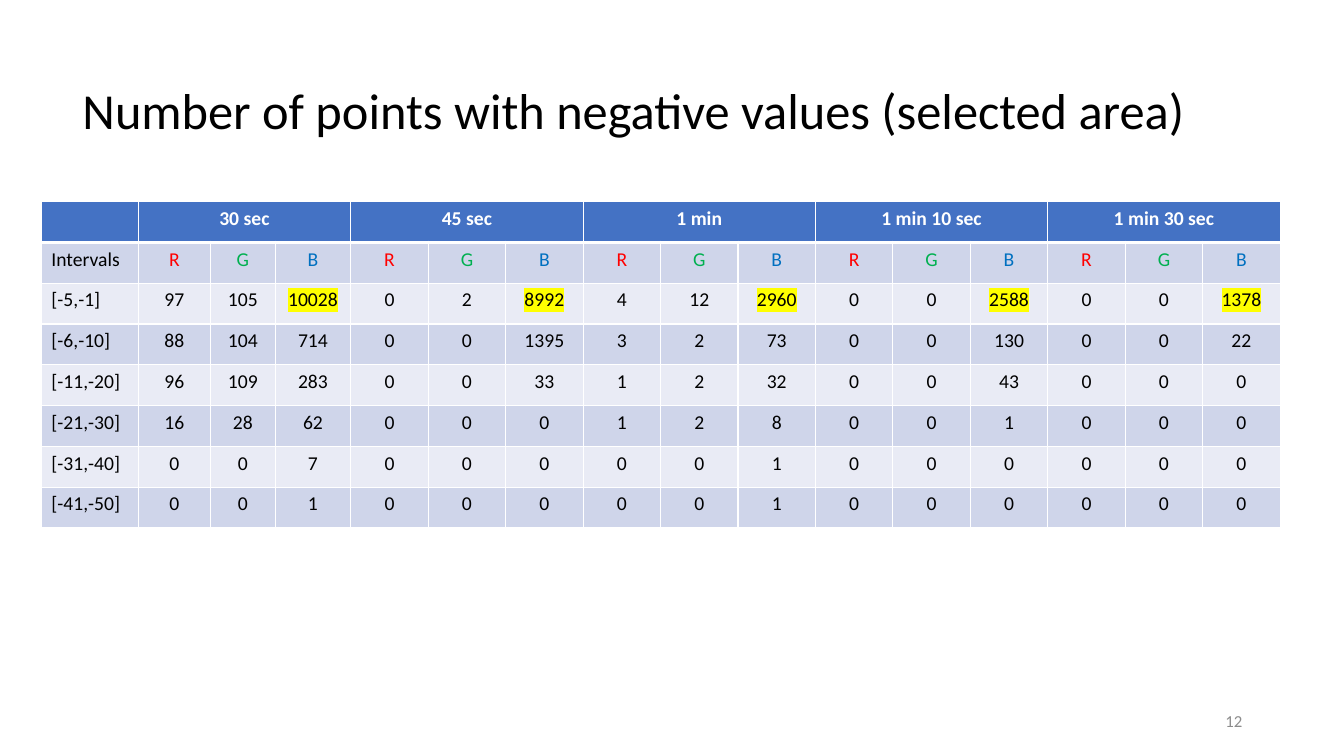
from lxml import etree
from pptx import Presentation
from pptx import util as u
from pptx.dml.color import RGBColor
from pptx.enum import text
from pptx.oxml import ns

FONT = "Calibri"
WHITE, BLACK, GREY, YELLOW = "FFFFFF", "000000", "8C8C8C", "FFFF00"
HEADER_FILL, BANDS = "4472C4", ("CFD5EA", "E9EBF5")
CHANNELS = {"R": "FF0000", "G": "00B050", "B": "0070C0"}
TIMES = ["30 sec", "45 sec", "1 min", "1 min 10 sec", "1 min 30 sec"]
COUNTS = {
    "[-5,-1]": [97, 105, 10028, 0, 2, 8992, 4, 12, 2960, 0, 0, 2588, 0, 0, 1378],
    "[-6,-10]": [88, 104, 714, 0, 0, 1395, 3, 2, 73, 0, 0, 130, 0, 0, 22],
    "[-11,-20]": [96, 109, 283, 0, 0, 33, 1, 2, 32, 0, 0, 43, 0, 0, 0],
    "[-21,-30]": [16, 28, 62, 0, 0, 0, 1, 2, 8, 0, 0, 1, 0, 0, 0],
    "[-31,-40]": [0, 0, 7, 0, 0, 0, 0, 0, 1, 0, 0, 0, 0, 0, 0],
    "[-41,-50]": [0, 0, 1, 0, 0, 0, 0, 0, 1, 0, 0, 0, 0, 0, 0],
}
FIRST_WIDTHS = [0.96, 0.72, 0.64, 0.75]


def color(value):
    return RGBColor.from_string(value)


def write(frame, words, size, hue, align, bold=False):
    frame.text = words
    paragraph = frame.paragraphs[0]
    paragraph.alignment = align
    for run in paragraph.runs:
        run.font.size, run.font.bold, run.font.name = u.Pt(size), bold, FONT
        run.font.color.rgb = color(hue)
    return paragraph


def highlight(run, hue):
    mark = etree.Element(ns.qn("a:highlight"))
    etree.SubElement(mark, ns.qn("a:srgbClr"), val=hue)
    run.font._element.find(ns.qn("a:solidFill")).addnext(mark)


def add_borders(cell, top, bottom):
    widths = {"lnL": 1, "lnR": 1, "lnT": top, "lnB": bottom}
    for place, (side, width) in enumerate(widths.items()):
        line = etree.Element(ns.qn(f"a:{side}"), w=str(u.Pt(width)))
        fill = etree.SubElement(line, ns.qn("a:solidFill"))
        etree.SubElement(fill, ns.qn("a:srgbClr"), val=WHITE)
        cell._tc.get_or_add_tcPr().insert(place, line)


def add_line_of_text(slide, box, words, size, hue, align):
    frame = slide.shapes.add_textbox(*map(u.Inches, box)).text_frame
    frame.word_wrap = True
    frame.vertical_anchor = text.MSO_ANCHOR.MIDDLE
    return write(frame, words, size, hue, align)


def add_counts_table(slide, box):
    rows = [[""] + [time if i == 0 else "" for time in TIMES for i in range(3)],
            ["Intervals"] + list(CHANNELS) * len(TIMES)]
    rows += [[interval, *counts] for interval, counts in COUNTS.items()]
    columns = len(rows[0])
    table = slide.shapes.add_table(len(rows), columns, *map(u.Inches, box)).table

    # Column widths: the last ones share what is left
    rest = (box[2] - sum(FIRST_WIDTHS)) / (columns - len(FIRST_WIDTHS))
    widths = FIRST_WIDTHS + [rest] * (columns - len(FIRST_WIDTHS))
    for column, width in zip(table.columns, widths):
        column.width = u.Inches(width)

    # Each time spans its three channels
    for start in range(1, columns, 3):
        table.cell(0, start).merge(table.cell(0, start + 2))

    for r, row in enumerate(rows):
        for c, value in enumerate(row):
            cell = table.cell(r, c)
            cell.fill.solid()
            cell.fill.fore_color.rgb = color(BANDS[(r - 1) % 2] if r else HEADER_FILL)
            add_borders(cell, 3 if r == 1 else 1, 1 if r else 3)
            hue = CHANNELS.get(value, BLACK) if r else WHITE
            align = text.PP_ALIGN.CENTER if c else text.PP_ALIGN.LEFT
            if value == "":
                cell.text_frame.paragraphs[0].font.size = u.Pt(14)
                continue
            paragraph = write(cell.text_frame, str(value), 14, hue, align, bold=r == 0)
            # Blue counts of the first interval stand out
            if r == 2 and c and c % 3 == 0:
                highlight(paragraph.runs[0], YELLOW)


def main():
    deck = Presentation()
    deck.slide_width, deck.slide_height = u.Inches(13.33), u.Inches(7.5)
    slide = deck.slides.add_slide(deck.slide_layouts[6])

    # Table
    add_counts_table(slide, (0.41, 2, 12.29, 3.24))

    # Page number
    add_line_of_text(slide, (9.42, 6.95, 3, 0.4), "12", 12, GREY, text.PP_ALIGN.RIGHT)

    # Title
    title = add_line_of_text(slide, (0.72, 0.4, 11.7, 1.45),
                             "Number of points with negative values (selected area)",
                             36, BLACK, text.PP_ALIGN.LEFT)
    title.line_spacing = 0.9
    deck.save("out.pptx")


if __name__ == "__main__":
    main()
